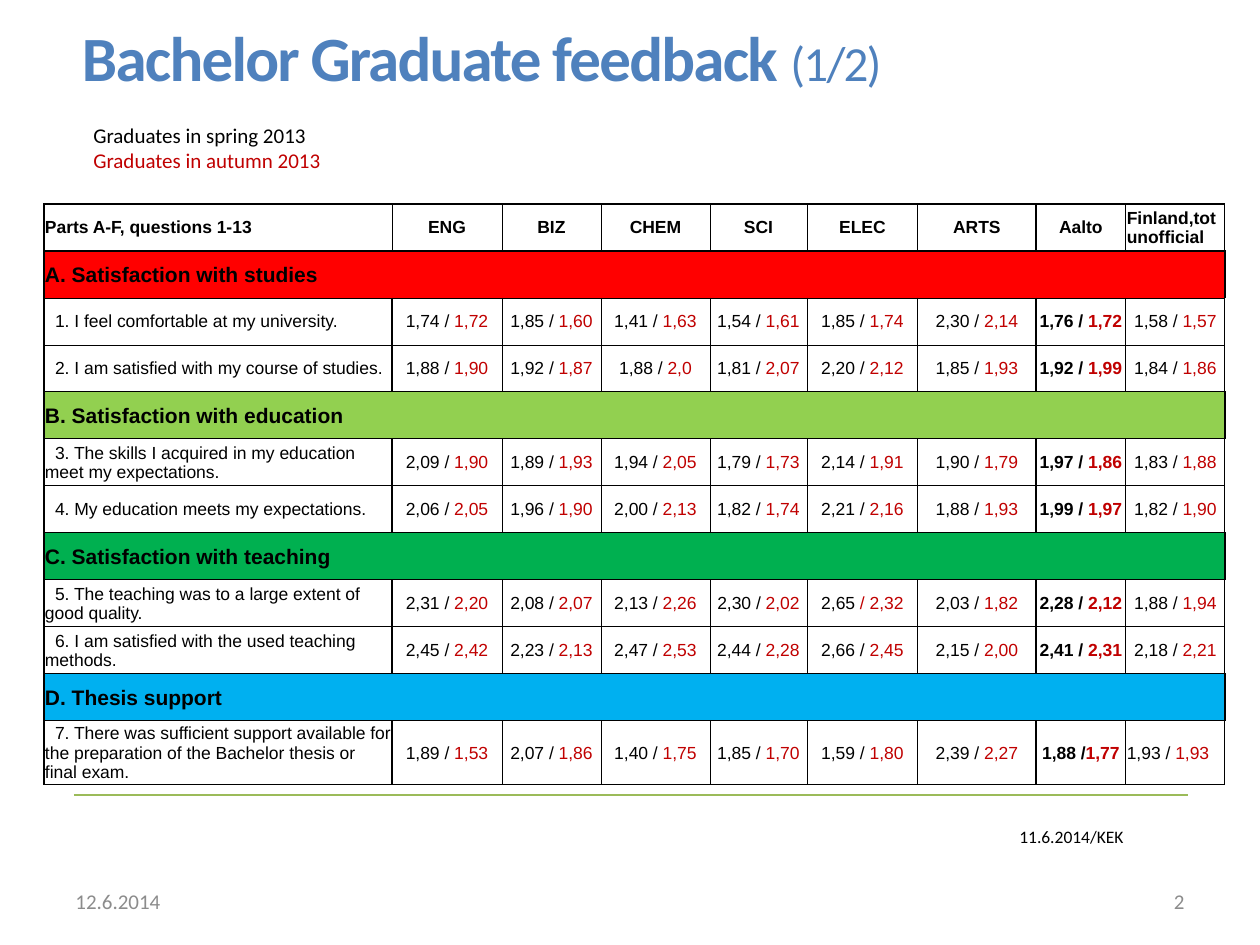
"""Builds the Bachelor Graduate feedback slide with its table of survey results."""
from lxml import etree
from pptx import Presentation
from pptx import util as u
from pptx.dml.color import RGBColor
from pptx.enum import shapes, text
from pptx.oxml import ns

PX = 914400 // 126
COLORS = {
    "title": "4F81BD", "black": "000000", "autumn": "C00000", "footer": "8C8C8C", "rule": "9BBB59",
    "A": "FF0000", "B": "92D050", "C": "00B050", "D": "00B0F0",
}
LEFT, CENTER, RIGHT = text.PP_ALIGN.LEFT, text.PP_ALIGN.CENTER, text.PP_ALIGN.RIGHT


def add_run(paragraph, words, size, color="black", bold=False, font="Calibri"):
    run = paragraph.add_run()
    run.text = words
    run.font.name, run.font.size, run.font.bold = font, u.Pt(size), bold
    run.font.color.rgb = RGBColor.from_string(COLORS[color])
    return run


def add_border(cell, side, points):
    properties = cell._tc.get_or_add_tcPr()
    line = etree.SubElement(properties, ns.qn(f"a:ln{side}"), w=str(u.Pt(points)))
    fill = etree.SubElement(line, ns.qn("a:solidFill"))
    etree.SubElement(fill, ns.qn("a:srgbClr"), val=COLORS["black"])


presentation = Presentation()
presentation.slide_width, presentation.slide_height = 1260 * PX, 945 * PX
slide = presentation.slides.add_slide(presentation.slide_layouts[5])

rule = slide.shapes.add_connector(shapes.MSO_CONNECTOR.STRAIGHT, 74 * PX, 795 * PX, 1188 * PX, 795 * PX)
rule.line.color.rgb = RGBColor.from_string(COLORS["rule"])
rule.line.width = u.Pt(1)
etree.SubElement(rule._element.spPr, ns.qn("a:effectLst"))

title = slide.shapes.title
title.left, title.top, title.width, title.height = 82 * PX, 30 * PX, 1114 * PX, 72 * PX
frame = title.text_frame
frame.margin_left = frame.margin_right = frame.margin_top = frame.margin_bottom = 0
frame.vertical_anchor = text.MSO_ANCHOR.TOP
frame.auto_size = text.MSO_AUTO_SIZE.NONE
paragraph = frame.paragraphs[0]
paragraph.alignment, paragraph.line_spacing = LEFT, 0.85
for words, size, bold in [("Bachelor Graduate feedback ", 36, True), ("(1/2)", 28, False)]:
    run = add_run(paragraph, words, size, "title", bold)
    run.font._element.set("spc", "-100")

MIDDLE, TOP = text.MSO_ANCHOR.MIDDLE, text.MSO_ANCHOR.TOP
notes = [
    ((81, 116, 255, 63), TOP, LEFT, 12,
     [("Graduates in spring 2013", "black"), ("Graduates in autumn 2013", "autumn")]),
    ((1007, 820, 132, 34), TOP, LEFT, 10, [("11.6.2014/KEK", "black")]),
    ((63, 876, 294, 50), MIDDLE, LEFT, 12, [("12.6.2014", "footer")]),
    ((903, 876, 294, 50), MIDDLE, RIGHT, 12, [("2", "footer")]),
]
for box, anchor, alignment, size, lines in notes:
    frame = slide.shapes.add_textbox(*(length * PX for length in box)).text_frame
    frame.word_wrap = anchor == MIDDLE
    frame.vertical_anchor = anchor
    for index, (words, color) in enumerate(lines):
        paragraph = frame.add_paragraph() if index else frame.paragraphs[0]
        paragraph.alignment = alignment
        add_run(paragraph, words, size, color)

headings = ["Parts A-F, questions 1-13", "ENG", "BIZ", "CHEM", "SCI", "ELEC", "ARTS", "Aalto",
            "Finland,tot\nunofficial"]
rows = [
    ("A. Satisfaction with studies", ""),
    ("1. I feel comfortable at my university.",
     "1,74 / |1,72;1,85 / |1,60;1,41 / |1,63;1,54 / |1,61;1,85 / |1,74;2,30 / |2,14;1,76 / |1,72;1,58 / |1,57"),
    ("2. I am satisfied with my course of studies.",
     "1,88 / |1,90;1,92 / |1,87;1,88 / |2,0;1,81 / |2,07;2,20 / |2,12;1,85 / |1,93;1,92 / |1,99;1,84 / |1,86"),
    ("B. Satisfaction with education", ""),
    ("3. The skills I acquired in my education meet my expectations.",
     "2,09 / |1,90;1,89 / |1,93;1,94 / |2,05;1,79 / |1,73;2,14 / |1,91;1,90 / |1,79;1,97 / |1,86;1,83 / |1,88"),
    ("4. My education meets my expectations.",
     "2,06 / |2,05;1,96 / |1,90;2,00 / |2,13;1,82 / |1,74;2,21 / |2,16;1,88 / |1,93;1,99 / |1,97;1,82 / |1,90"),
    ("C. Satisfaction with teaching", ""),
    ("5. The teaching was to a large extent of good quality.",
     "2,31 / |2,20;2,08 / |2,07;2,13 / |2,26;2,30 /| 2,02;2,65 |/ 2,32;2,03 / |1,82;2,28 / |2,12;1,88 / |1,94"),
    ("6. I am satisfied with the used teaching methods.",
     "2,45 / |2,42;2,23 / |2,13;2,47 / |2,53;2,44 / |2,28;2,66 / |2,45;2,15 / |2,00;2,41 / |2,31;2,18 / |2,21"),
    ("D. Thesis support", ""),
    ("7. There was sufficient support available for the preparation of the Bachelor thesis or final exam.",
     "1,89 / |1,53;2,07 / |1,86;1,40 / |1,75;1,85 / |1,70;1,59 / |1,80;2,39 / |2,27;1,88 /|1,77;1,93 / |1,93"),
]
widths = [348, 110, 99, 109, 97, 111, 118, 90, 99]
heights = [47] * len(rows) + [63]
AALTO, FINLAND = 7, 8

table = slide.shapes.add_table(len(heights), len(widths), 44 * PX, 204 * PX,
                               sum(widths) * PX, sum(heights) * PX).table
table.first_row = table.horz_banding = False
for column, width in zip(table.columns, widths):
    column.width = width * PX
for row, height in zip(table.rows, heights):
    row.height = height * PX

for row in range(len(heights)):
    label, results = rows[row - 1] if row else ("", "")
    is_section = row > 0 and not results
    for column in range(len(widths)):
        cell = table.cell(row, column)
        cell.margin_left = cell.margin_right = cell.margin_top = PX
        cell.margin_bottom = 0
        cell.vertical_anchor = MIDDLE
        thick = {
            "L": column in (0, AALTO) or (column == 1 and row > 0),
            "R": column == AALTO - 1 or (column == 0 and row > 0),
            "T": row < 2,
            "B": row == 0,
        }
        for side, is_thick in thick.items():
            add_border(cell, side, 1 if is_thick else 0.5)
        if is_section:
            cell.fill.solid()
            cell.fill.fore_color.rgb = RGBColor.from_string(COLORS[label[0]])
        else:
            cell.fill.background()

        paragraph = cell.text_frame.paragraphs[0]
        is_left = column == 0 or (column == FINLAND and row in (0, len(rows)))
        paragraph.alignment = LEFT if is_left else CENTER
        if row == 0:
            for index, words in enumerate(headings[column].split("\n")):
                if index:
                    paragraph = cell.text_frame.add_paragraph()
                add_run(paragraph, words, 10, bold=True, font="Arial")
        elif column == 0:
            if not is_section:
                paragraph._p.get_or_add_pPr().set("indent", str(10 * PX))
            add_run(paragraph, label, 12 if is_section else 10, bold=is_section, font="Arial")
        elif results:
            spring, autumn = results.split(";")[column - 1].split("|")
            add_run(paragraph, spring, 10, bold=column == AALTO, font="Arial")
            add_run(paragraph, autumn, 10, "autumn", column == AALTO, "Arial")
    if is_section:
        table.cell(row, 0).merge(table.cell(row, len(widths) - 1))

presentation.save("out.pptx")
